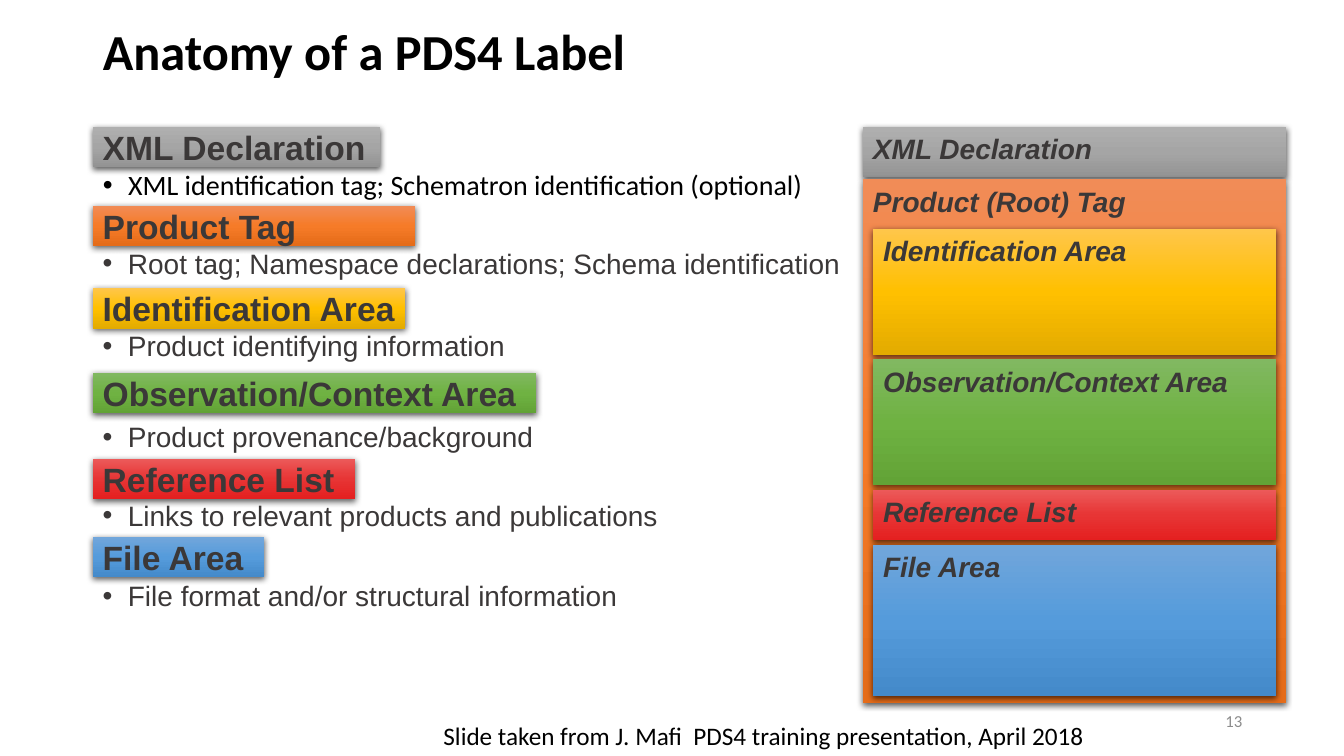
from copy import deepcopy

from lxml.etree import SubElement
from pptx import Presentation
from pptx.dml.color import RGBColor
from pptx.enum.shapes import MSO_SHAPE
from pptx.enum.text import MSO_ANCHOR, MSO_AUTO_SIZE, PP_ALIGN
from pptx.oxml.ns import qn
from pptx.util import Inches, Pt

BLACK = RGBColor(0x00, 0x00, 0x00)
CHARCOAL = RGBColor(0x3B, 0x38, 0x38)
PAGE_GRAY = RGBColor(0x8C, 0x8C, 0x8C)

# Gradients: top, middle, bottom
GRAY = (RGBColor(0xAF, 0xAF, 0xAF), RGBColor(0xA5, 0xA5, 0xA5), RGBColor(0x93, 0x93, 0x93))
ORANGE = (RGBColor(0xF1, 0x8C, 0x57), RGBColor(0xF6, 0x7B, 0x28), RGBColor(0xE5, 0x6C, 0x19))
GOLD = (RGBColor(0xFF, 0xC6, 0x4B), RGBColor(0xFF, 0xC0, 0x00), RGBColor(0xE3, 0xAB, 0x00))
GREEN = (RGBColor(0x81, 0xB8, 0x61), RGBColor(0x6F, 0xB2, 0x42), RGBColor(0x62, 0xA3, 0x36))
RED = (RGBColor(0xEC, 0x5A, 0x5A), RGBColor(0xE7, 0x35, 0x35), RGBColor(0xE4, 0x20, 0x20))
BLUE = (RGBColor(0x71, 0xA6, 0xDB), RGBColor(0x55, 0x9B, 0xDB), RGBColor(0x44, 0x8A, 0xCA))

# Grid cells are a tenth of an inch
LEFT, TOP = 9.2, 12.6
HEADING_HEIGHT = 4
BULLET_WIDTH = 75.4
DIAGRAM_LEFT, DIAGRAM_WIDTH = 85.6, 42
AREA_GAP = 0.45

# Heading, gradient, heading row, heading width, bullet, bullet row, bullet height
SECTIONS = [
    ("XML Declaration", GRAY, TOP, 28.5,
     "XML identification tag; Schematron identification (optional)", 16.5, 4.4),
    ("Product Tag", ORANGE, 20.4, 32,
     "Root tag; Namespace declarations; Schema identification", 24.3, 4.9),
    ("Identification Area", GOLD, 28.6, 31, "Product identifying information", 32.5, 4.6),
    ("Observation/Context Area", GREEN, 37, 44, "Product provenance/background", 41.5, 5.6),
    ("Reference List", RED, 45.5, 26, "Links to relevant products and publications", 49.3, 4.8),
    ("File Area", BLUE, 53.3, 17, "File format and/or structural information", 57.3, 5.1),
]

# Areas inside the product tag: name, gradient, height
AREAS = [
    ("Identification Area", GOLD, 12.5),
    ("Observation/Context Area", GREEN, 12.5),
    ("Reference List", RED, 5),
    ("File Area", BLUE, 15),
]


def grid(*cells):
    return [Inches(cell / 10) for cell in cells]


def place(shape, left, top, width, height):
    shape.left, shape.top, shape.width, shape.height = grid(left, top, width, height)


def write(shape, text, size, color, font="Arial", bold=False, italic=False,
          anchor=MSO_ANCHOR.TOP, align=PP_ALIGN.LEFT):
    frame = shape.text_frame
    frame.text = text
    frame.word_wrap = True
    frame.auto_size = MSO_AUTO_SIZE.NONE
    frame.vertical_anchor = anchor
    paragraph = frame.paragraphs[0]
    paragraph.alignment = align
    run_font = paragraph.runs[0].font
    run_font.name, run_font.size = font, Pt(size)
    run_font.bold, run_font.italic = bold, italic
    run_font.color.rgb = color
    return paragraph


def fill_gradient(shape, colors):
    shape.fill.gradient()
    shape.fill.gradient_angle = 270
    stop_list = shape._element.spPr.find(qn("a:gradFill")).find(qn("a:gsLst"))
    stop_list.append(deepcopy(stop_list[-1]))
    for stop, position, color in zip(shape.fill.gradient_stops, (0, 0.5, 1), colors):
        stop.position = position
        stop.color.rgb = color


def add_shadow(shape):
    shape.shadow.inherit = False
    effects = shape._element.spPr.find(qn("a:effectLst"))
    shadow = SubElement(effects, qn("a:outerShdw"), blurRad=str(Pt(4.5)), dist=str(Pt(1.5)),
                        dir="5400000", algn="ctr", rotWithShape="0")
    color = SubElement(shadow, qn("a:srgbClr"), val="000000")
    SubElement(color, qn("a:alpha"), val="63000")


def add_box(slide, box, colors, text, size, **text_format):
    shape = slide.shapes.add_shape(MSO_SHAPE.RECTANGLE, *grid(*box))
    shape.line.fill.background()
    fill_gradient(shape, colors)
    add_shadow(shape)
    write(shape, text, size, CHARCOAL, bold=True, **text_format)


def write_bullet(shape, text, color, font):
    paragraph = write(shape, text, 20, color, font)
    paragraph.line_spacing = 0.9
    paragraph.space_before = Pt(10)
    properties = paragraph._p.get_or_add_pPr()
    properties.set("marL", str(Inches(0.25)))
    properties.set("indent", str(-Inches(0.25)))
    SubElement(properties, qn("a:buFont"), typeface="Arial")
    SubElement(properties, qn("a:buChar"), char="•")


def add_sections(slide):
    for index, (heading, colors, row, width, bullet, bullet_row, height) in enumerate(SECTIONS):
        bullet_box = (LEFT, bullet_row, BULLET_WIDTH, height)
        if index == 0:
            body = slide.placeholders[1]
            place(body, *bullet_box)
            write_bullet(body, bullet, BLACK, "Calibri")
        else:
            write_bullet(slide.shapes.add_textbox(*grid(*bullet_box)), bullet, CHARCOAL, "Arial")
        add_box(slide, (LEFT, row, width, HEADING_HEIGHT), colors, heading, 24,
                anchor=MSO_ANCHOR.MIDDLE)


def add_diagram(slide):
    add_box(slide, (DIAGRAM_LEFT, TOP, DIAGRAM_WIDTH, 5), GRAY, "XML Declaration", 20, italic=True)
    add_box(slide, (DIAGRAM_LEFT, 17.8, DIAGRAM_WIDTH, 52), ORANGE, "Product (Root) Tag", 20,
            italic=True)
    row = 22.7
    for name, colors, height in AREAS:
        add_box(slide, (DIAGRAM_LEFT + 1, row, DIAGRAM_WIDTH - 2, height), colors, name, 20,
                italic=True)
        row += height + AREA_GAP


def add_footer(slide):
    credit = slide.shapes.add_textbox(*grid(43, 71, 66.3, 4))
    write(credit, "Slide taken from J. Mafi  PDS4 training presentation, April 2018", 18, BLACK,
          "Calibri")
    credit.text_frame.word_wrap = False
    page_number = slide.shapes.add_textbox(*grid(94.2, 69.5, 30, 4))
    write(page_number, "13", 12, PAGE_GRAY, "Calibri", anchor=MSO_ANCHOR.MIDDLE,
          align=PP_ALIGN.RIGHT)


def main():
    presentation = Presentation()
    presentation.slide_width, presentation.slide_height = Inches(13.33), Inches(7.5)
    slide = presentation.slides.add_slide(presentation.slide_layouts[1])

    # Title
    title = slide.shapes.title
    place(title, LEFT, 2.3, 115, 6.2)
    paragraph = write(title, "Anatomy of a PDS4 Label", 36, BLACK, "Calibri", bold=True,
                      anchor=MSO_ANCHOR.MIDDLE)
    paragraph.line_spacing = 0.9

    # Explanations on the left, label structure on the right
    add_sections(slide)
    add_diagram(slide)
    add_footer(slide)
    presentation.save("out.pptx")


if __name__ == "__main__":
    main()
